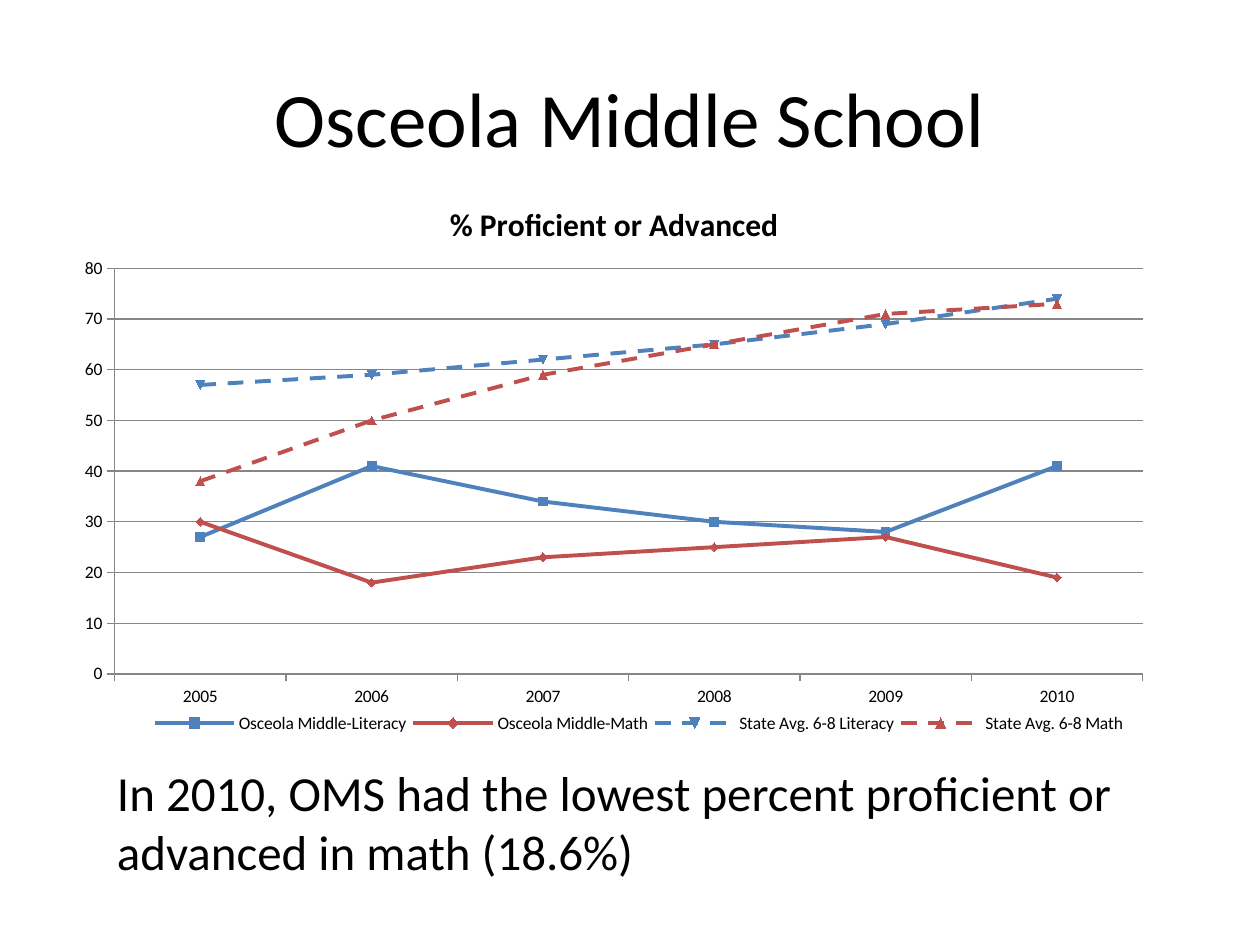
from dataclasses import dataclass

from lxml import etree
from pptx import Presentation
from pptx.chart.data import CategoryChartData
from pptx.dml.color import RGBColor
from pptx.enum.chart import XL_CHART_TYPE, XL_LEGEND_POSITION, XL_TICK_MARK
from pptx.enum.dml import MSO_LINE
from pptx.enum.text import MSO_ANCHOR, MSO_AUTO_SIZE, PP_ALIGN
from pptx.oxml.ns import qn
from pptx.util import Inches, Pt

LINE_CHART = XL_CHART_TYPE.LINE_MARKERS
LEGEND_BOTTOM = XL_LEGEND_POSITION.BOTTOM
TICK_OUTSIDE = XL_TICK_MARK.OUTSIDE
DASH = MSO_LINE.DASH
MIDDLE, TOP = MSO_ANCHOR.MIDDLE, MSO_ANCHOR.TOP
CENTER, LEFT = PP_ALIGN.CENTER, PP_ALIGN.LEFT
NO_FIT, GROW = MSO_AUTO_SIZE.NONE, MSO_AUTO_SIZE.SHAPE_TO_FIT_TEXT


@dataclass(frozen=True)
class Theme:
    font: str = "Calibri"
    text: RGBColor = RGBColor(0x00, 0x00, 0x00)
    literacy: RGBColor = RGBColor(0x4F, 0x81, 0xBD)
    math: RGBColor = RGBColor(0xC0, 0x50, 0x4D)
    grid: RGBColor = RGBColor(0x86, 0x86, 0x86)
    title_size: int = 44
    body_size: int = 28
    chart_title_size: int = 18
    chart_size: int = 10
    series_width: float = 2.25


THEME = Theme()
SLIDE_WIDTH, SLIDE_HEIGHT = Inches(10), Inches(7.5)

# Left, top, width, height in inches; plot and legend count from the chart's corner
CHART_AREA = (0.5, 1.42, 8.75, 4.58)
PLOT_AREA = (0.41, 0.71, 8.16, 3.22)
LEGEND_AREA = (0.67, 4.21, 7.8, 0.22)

YEARS = ["2005", "2006", "2007", "2008", "2009", "2010"]
# Name, values, colour, dashed
SERIES = [
    ("Osceola Middle-Literacy", [27, 41, 34, 30, 28, 41], THEME.literacy, False),
    ("Osceola Middle-Math", [30, 18, 23, 25, 27, 19], THEME.math, False),
    ("State Avg. 6-8 Literacy", [57, 59, 62, 65, 69, 74], THEME.literacy, True),
    ("State Avg. 6-8 Math", [38, 50, 59, 65, 71, 73], THEME.math, True),
]


def place(area):
    """Turn inches into lengths."""
    return [Inches(length) for length in area]


def style_font(font, size, bold=False):
    font.name = THEME.font
    font.size = Pt(size)
    font.bold = bold
    font.color.rgb = THEME.text


def add_text(page, area, text, size, align=LEFT, anchor=TOP, fit=NO_FIT):
    box = page.shapes.add_textbox(*place(area))
    frame = box.text_frame
    frame.word_wrap = True
    frame.auto_size = fit
    frame.vertical_anchor = anchor
    para = frame.paragraphs[0]
    para.alignment = align
    span = para.add_run()
    span.text = text
    style_font(span.font, size)


def set_layout(part, index, area, **modes):
    """Fix a chart part's area, written as shares of the chart's size."""
    for old in part.findall(qn("c:layout")):
        part.remove(old)
    left, top, width, height = area
    chart_width, chart_height = CHART_AREA[2:]
    settings = {
        **modes, "xMode": "edge", "yMode": "edge",
        "x": left / chart_width, "y": top / chart_height,
        "w": width / chart_width, "h": height / chart_height,
    }
    layout = etree.Element(qn("c:layout"))
    manual = etree.SubElement(layout, qn("c:manualLayout"))
    for name, value in settings.items():
        etree.SubElement(manual, qn(f"c:{name}")).set("val", str(value))
    part.insert(index, layout)


def style_axes(chart):
    for axis in (chart.category_axis, chart.value_axis):
        axis.major_tick_mark = TICK_OUTSIDE
        axis.format.line.color.rgb = THEME.grid
        axis.format.line.width = Pt(0.75)
        style_font(axis.tick_labels.font, THEME.chart_size)
    values = chart.value_axis
    values.minimum_scale, values.maximum_scale, values.major_unit = 0, 80, 10
    values.has_major_gridlines = True
    values.major_gridlines.format.line.color.rgb = THEME.grid
    values.major_gridlines.format.line.width = Pt(0.75)


def style_series(series, color, dashed):
    series.smooth = False
    line = series.format.line
    line.color.rgb = color
    line.width = Pt(THEME.series_width)
    marker = series.marker
    marker.format.fill.solid()
    marker.format.fill.fore_color.rgb = color
    marker.format.line.color.rgb = color
    if dashed:
        line.dash_style = DASH
        marker.size = 5


def add_line_chart(page, title):
    data = CategoryChartData()
    data.categories = YEARS
    for name, values, _, _ in SERIES:
        data.add_series(name, values)
    chart = page.shapes.add_chart(LINE_CHART, *place(CHART_AREA), data).chart
    style_font(chart.font, THEME.chart_size)

    # Title and legend
    chart.has_title = True
    span = chart.chart_title.text_frame.paragraphs[0].add_run()
    span.text = title
    style_font(span.font, THEME.chart_title_size, bold=True)
    chart.has_legend = True
    legend = chart.legend
    legend.position = LEGEND_BOTTOM
    legend.include_in_layout = False
    style_font(legend.font, THEME.chart_size)
    set_layout(legend._element, 1, LEGEND_AREA)

    # Plot
    plot = chart.plots[0]
    plot.vary_by_categories = False
    set_layout(plot._element.getparent(), 0, PLOT_AREA, layoutTarget="inner")
    style_axes(chart)
    for series, (_, _, color, dashed) in zip(plot.series, SERIES):
        style_series(series, color, dashed)


def main():
    deck = Presentation()
    deck.slide_width, deck.slide_height = SLIDE_WIDTH, SLIDE_HEIGHT
    page = deck.slides.add_slide(deck.slide_layouts[6])

    # Heading
    add_text(page, (0.5, 0.3, 9, 1.25), "Osceola Middle School",
             THEME.title_size, align=CENTER, anchor=MIDDLE)
    # Results by year
    add_line_chart(page, "% Proficient or Advanced")
    # Finding
    add_text(page, (0.83, 6, 8.25, 1.35),
             "In 2010, OMS had the lowest percent proficient or advanced in math (18.6%)",
             THEME.body_size, fit=GROW)

    deck.save("out.pptx")


if __name__ == "__main__":
    main()
